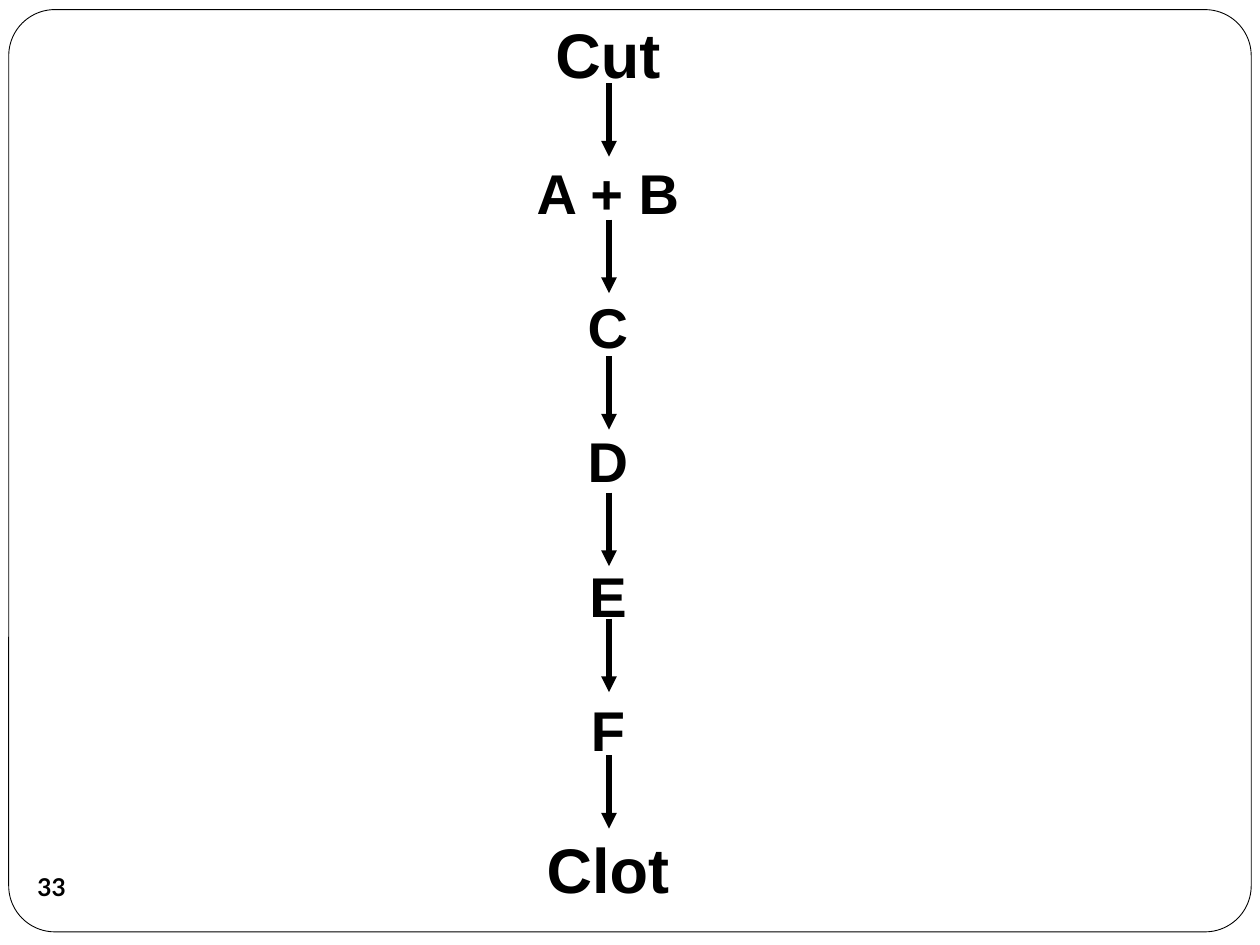
from lxml import etree
from pptx import Presentation
from pptx.dml.color import RGBColor
from pptx.enum import shapes, text
from pptx.oxml import ns
from pptx.util import Pt

BLACK = RGBColor(0, 0, 0)
WHITE = RGBColor(255, 255, 255)

STEPS = [("Cut", 36), ("A + B", 32), ("C", 32), ("D", 32),
         ("E", 32), ("F", 32), ("Clot", 36)]
TOPS = [47.5, 125.5, 203.5, 281.5, 353.5, 431.5]  # arrow starts
MID = 348
DROP = 42
GAP = 38.4  # space between steps, keeps each word clear of its arrows
PAGE = "33"


def add_run(para, words, size, font):
    para.alignment = text.PP_ALIGN.CENTER
    run = para.add_run()
    run.text = words
    run.font.size = Pt(size)
    run.font.name = font
    run.font.bold = True
    run.font.color.rgb = BLACK


def add_arrow(slide, top):
    line = slide.shapes.add_connector(
        shapes.MSO_CONNECTOR.STRAIGHT, Pt(MID), Pt(top), Pt(MID), Pt(top + DROP))
    line.line.color.rgb = BLACK
    line.line.width = Pt(3)
    props = line._element.spPr
    tail = etree.SubElement(props.find(ns.qn("a:ln")), ns.qn("a:tailEnd"))
    tail.set("type", "triangle")
    etree.SubElement(props, ns.qn("a:effectLst"))


deck = Presentation()
deck.slide_width, deck.slide_height = Pt(720), Pt(540)
slide = deck.slides.add_slide(deck.slide_layouts[6])

frame = slide.shapes.add_shape(
    shapes.MSO_SHAPE.ROUNDED_RECTANGLE, Pt(5), Pt(5.5), Pt(710), Pt(527))
frame.adjustments[0] = 0.05
frame.shadow.inherit = False
frame.fill.solid()
frame.fill.fore_color.rgb = WHITE
frame.line.color.rgb = BLACK
frame.line.width = Pt(0.5)

chain = slide.shapes.add_textbox(Pt(298.8), Pt(5.2), Pt(97.2), Pt(521.3)).text_frame
chain.word_wrap = True
for i, (words, size) in enumerate(STEPS):
    para = chain.add_paragraph() if i else chain.paragraphs[0]
    para.space_before = Pt(GAP if i else 0)
    add_run(para, words, size, "Arial")

for top in TOPS:
    add_arrow(slide, top)

badge = slide.shapes.add_shape(
    shapes.MSO_SHAPE.OVAL, Pt(11.5), Pt(489), Pt(36), Pt(36))
badge.shadow.inherit = False
badge.fill.background()
badge.line.fill.background()
label = badge.text_frame
label.word_wrap = False
label.vertical_anchor = text.MSO_ANCHOR.MIDDLE
label.margin_left = label.margin_right = label.margin_top = label.margin_bottom = 0
add_run(label.paragraphs[0], PAGE, 14, "Lato")

deck.save("out.pptx")
